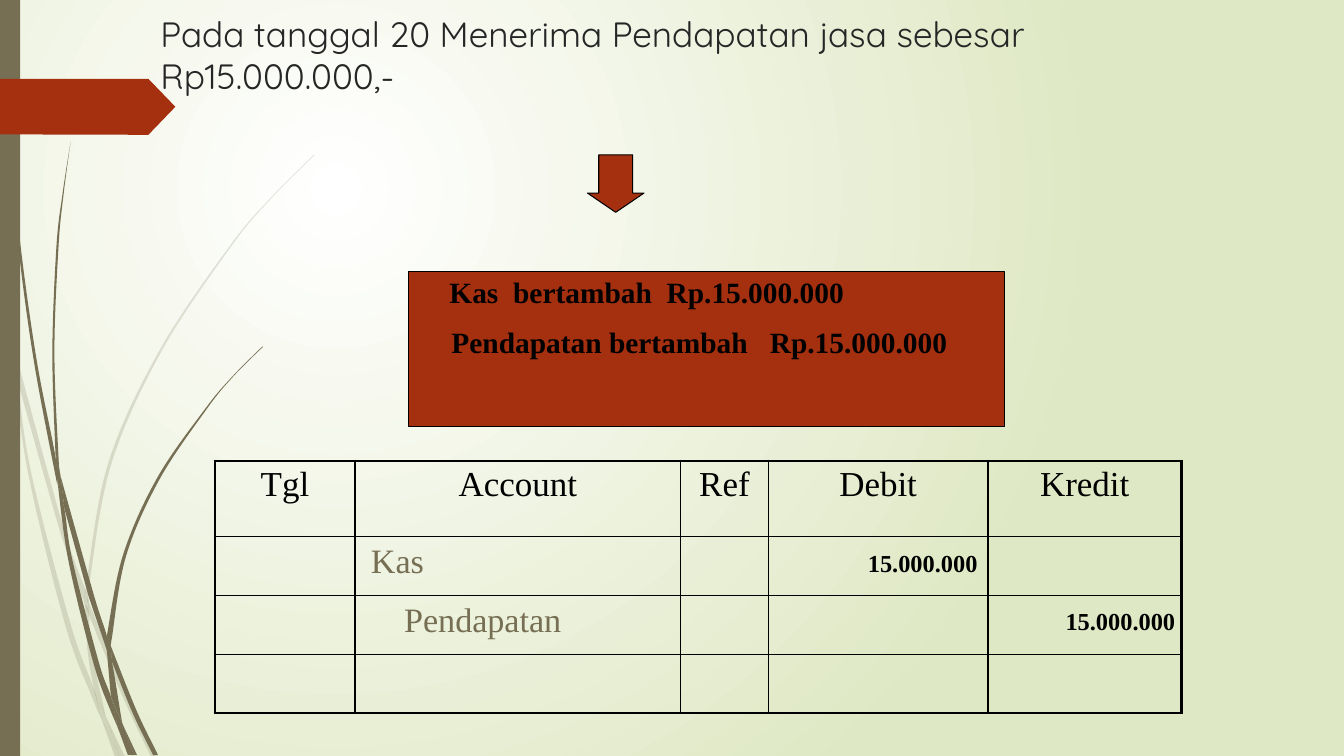
from lxml import etree
from pptx import Presentation
from pptx.dml.color import RGBColor
from pptx.enum.shapes import MSO_SHAPE
from pptx.enum.text import MSO_ANCHOR, PP_ALIGN
from pptx.oxml import parse_xml
from pptx.oxml.ns import nsdecls, qn
from pptx.util import Pt

LEFT, CENTER, RIGHT = PP_ALIGN.LEFT, PP_ALIGN.CENTER, PP_ALIGN.RIGHT
TOP, MIDDLE = MSO_ANCHOR.TOP, MSO_ANCHOR.MIDDLE
RECTANGLE, DOWN_ARROW = MSO_SHAPE.RECTANGLE, MSO_SHAPE.DOWN_ARROW

COLORS = {"black": "000000", "title": "262626", "olive": "766F54",
          "rust": "A53010", "white": "FFFFFF", "pale": "DFE8C4"}
SERIF = "Times New Roman"

TITLE = "Pada tanggal 20 Menerima Pendapatan jasa sebesar Rp15.000.000,-"
HEADERS = ["Tgl", "Account", "Ref", "Debit", "Kredit"]
COLUMN_WIDTHS = [100.1, 232.6, 62.6, 157, 138.2]
ROW_HEIGHTS = [54, 42, 42, 42]

# text, (left, top, width, height), size, colour, bold, alignment, anchor
ENTRIES = [
    ("Kas  bertambah  Rp.15.000.000", (314.6, 193, 297, 32), 21, "black", True, LEFT, TOP),
    ("Pendapatan bertambah   Rp.15.000.000", (316, 228.7, 369, 32), 21, "black", True, LEFT, TOP),
    ("Kas", (258.5, 392.4, 177, 15), 24.4, "olive", False, LEFT, MIDDLE),
    ("15.000.000", (612.7, 388.4, 92, 27), 17.4, "black", True, RIGHT, TOP),
    ("Pendapatan", (282.2, 432, 207, 20), 24.4, "olive", False, LEFT, MIDDLE),
    ("15.000.000", (753.9, 429.8, 92, 27), 17.4, "black", True, RIGHT, TOP),
]

# each piece of grass: one curved side, then the other side on the way back
FAINT_GRASS = [
    ([(7.9, 252), (6.5, 231.8), (0, 203)], [(0, 215.3), (7.2, 247.7)]),
    ([(10.1, 248.4), (44.6, 374.4), (61.2, 421.9)], [(60.5, 431.3), (41.8, 375.8), (12.2, 270.7)]),
    ([(63.4, 429.1), (66.2, 437), (91.4, 498.2), (111.6, 540.7)],
     [(108, 540.7), (88.6, 499.7), (63.4, 439.2)]),
    ([(75.6, 511.9), (89.3, 540.7)], [(85.7, 540.7)]),
    ([(7.9, 252), (12.2, 270.7), (22.3, 337.7), (50.4, 445.7), (67, 491.8), (71.3, 509)],
     [(72.7, 514.1), (66.2, 499), (46.8, 447.1), (20.2, 338.4), (7.9, 252)]),
    ([(60.5, 431.3), (63.4, 437.8), (65.5, 465.1), (75.6, 511.9)],
     [(69.1, 498.2), (67, 491.8), (62.6, 465.1), (60.5, 431.3)]),
    ([(61.2, 421.9), (61.2, 420.5), (77, 331.9), (113.8, 250.6), (164.2, 175.7),
      (193, 141.8), (224.6, 110.2)],
     [(224.6, 110.9), (193, 142.6), (164.9, 176.4), (115.2, 251.3), (79.2, 332.6),
      (63.4, 420.5), (63.4, 429.1)]),
    ([(72.7, 514.1), (85.7, 540.7)], [(82.1, 540.7)]),
    ([(61.2, 421.9), (63.4, 429.1), (63.4, 439.2)], [(60.5, 431.3)]),
    ([(67, 491.8), (69.1, 498.2), (75.6, 511.9), (85.7, 540.7)], [(72.7, 514.1), (71.3, 509)]),
]
SOLID_GRASS = [
    ([(2.9, 0), (3.6, 34.6), (5.8, 78.5), (13.7, 167), (25.9, 255.6), (39.6, 326.2), (41, 346.3)],
     [(40.3, 343.4), (23.8, 255.6), (12.2, 167.8), (5, 79.2), (2.9, 34.6), (2.2, 0)]),
    ([(43.2, 339.8), (67, 424.8), (76.3, 454.3), (76.3, 464.4)], [(63.4, 426.2), (46.1, 363.6)]),
    ([(79.2, 461.5), (97.9, 508.3), (113, 539.3)], [(109.4, 539.3), (95, 509.8), (79.9, 472.3)]),
    ([(41, 343.4), (46.1, 363.6), (51.8, 400.3), (70.6, 473), (79.2, 497.5), (84.2, 519.8)],
     [(79.9, 509.8), (67, 474.5), (49, 401), (41, 343.4)]),
    ([(43.2, 339.8), (41.8, 326.2), (38.9, 251.3), (41.8, 176.4), (45.4, 139), (50.4, 101.5)],
     [(50.4, 101.5), (44.6, 139), (40.3, 176.4), (37.4, 251.3), (39.6, 323.3)]),
    ([(87.8, 517.7), (97.9, 539.3)], [(95.8, 539.3)]),
    ([(39.6, 323.3), (43.2, 339.8), (46.1, 363.6)], [(41, 343.4)]),
    ([(76.3, 454.3), (87.8, 396.7), (112.3, 341.3), (146.9, 291.6), (166.3, 268.6), (187.2, 247.7)],
     [(187.9, 247.7), (166.3, 269.3), (147.6, 292.3), (113.8, 342.7), (90, 397.4),
      (79.9, 455.8), (79.2, 461.5)]),
    ([(84.2, 519.8), (94.3, 539.3)], [(91.4, 539.3)]),
    ([(76.3, 464.4), (79.9, 472.3), (87.1, 515.5), (87.8, 517.7)], [(83.5, 508.3), (79.2, 497.5)]),
    ([(76.3, 454.3), (79.2, 461.5), (79.9, 472.3)], [(76.3, 464.4)]),
    ([(79.2, 497.5), (83.5, 508.3), (87.8, 517.7), (95.8, 539.3)], [(93.6, 539.3), (84.2, 519.8)]),
]
RIBBON = [(0, 56.3), (106, 56.3), (125.3, 76.3), (106, 96.3), (0, 96)]


def rgb(name):
    return RGBColor.from_string(COLORS[name])


def paint(shape, fill, outlined=False):
    shape.shadow.inherit = False
    shape.fill.solid()
    shape.fill.fore_color.rgb = rgb(fill)
    if outlined:
        shape.line.color.rgb = rgb("black")
        shape.line.width = Pt(0.75)
    else:
        shape.line.fill.background()


def add_preset(kind, box, fill, outlined=False):
    shape = slide.shapes.add_shape(kind, *map(Pt, box))
    paint(shape, fill, outlined)
    return shape


def add_outline(points, fill):
    corners = [(Pt(x), Pt(y)) for x, y in points]
    builder = slide.shapes.build_freeform(*corners[0])
    builder.add_line_segments(corners[1:], close=True)
    shape = builder.convert_to_shape()
    paint(shape, fill)
    return shape


def add_grass(side, back, opacity):
    """Outline whose two sides are bent into smooth Bézier curves."""
    blade = add_outline(side + back, "olive")
    points = [(int(pt.get("x")), int(pt.get("y"))) for pt in blade.element.iter(qn("a:pt"))]
    turn = len(side)
    for i, segment in enumerate(list(blade.element.iter(qn("a:lnTo")))):
        if i + 1 == turn:
            continue
        start, end = points[i], points[i + 1]
        before = start if i in (0, turn) else points[i - 1]
        after = end if i + 2 in (turn, len(points)) else points[i + 2]
        segment.tag = qn("a:cubicBezTo")
        controls = [[s + (e - b) / 6 for b, s, e in zip(before, start, end)],
                    [e - (a - s) / 6 for s, e, a in zip(start, end, after)]]
        for index, (x, y) in enumerate(controls):
            control = etree.Element(qn("a:pt"), x=str(round(x)), y=str(round(y)))
            segment.insert(index, control)
    if opacity < 100:
        color = next(blade.element.spPr.iter(qn("a:srgbClr")))
        etree.SubElement(color, qn("a:alpha"), val=str(opacity * 1000))


def write(frame, text, size, color, font=SERIF, bold=False, align=LEFT):
    paragraph = frame.paragraphs[0]
    paragraph.alignment = align
    run = paragraph.add_run()
    run.text = text
    run.font.name, run.font.size, run.font.bold = font, Pt(size), bold
    run.font.color.rgb = rgb(color)


def set_borders(cell, widths):
    properties = cell._tc.get_or_add_tcPr()
    for index, (side, width) in enumerate(widths.items()):
        properties.insert(index, parse_xml(
            f'<a:ln{side} {nsdecls("a")} w="{Pt(width)}"><a:solidFill>'
            f'<a:srgbClr val="{COLORS["black"]}"/></a:solidFill></a:ln{side}>'))


prs = Presentation()
prs.slide_width, prs.slide_height = Pt(960), Pt(540)
slide = prs.slides.add_slide(prs.slide_layouts[5])
slide.element.cSld.insert(0, parse_xml(
    f'<p:bg {nsdecls("p", "a")}><p:bgPr><a:gradFill rotWithShape="1"><a:gsLst>'
    f'<a:gs pos="0"><a:srgbClr val="{COLORS["white"]}"/></a:gs>'
    f'<a:gs pos="100000"><a:srgbClr val="{COLORS["pale"]}"/></a:gs></a:gsLst>'
    '<a:path path="circle"><a:fillToRect l="50000" t="50000" r="100000" b="100000"/></a:path>'
    '</a:gradFill><a:effectLst/></p:bgPr></p:bg>'))

for pieces, opacity in ((FAINT_GRASS, 20), (SOLID_GRASS, 100)):
    for side, back in pieces:
        add_grass(side, back, opacity)
add_preset(RECTANGLE, (0, 0, 14.4, 540), "olive")
add_outline(RIBBON, "rust")

title = slide.shapes.title
title.left, title.top, title.width, title.height = map(Pt, (107.3, 5.4, 753, 72))
title.text_frame.word_wrap = True
title.text_frame.vertical_anchor = TOP
write(title.text_frame, TITLE, 25.1, "title", "Quicksand")
slide.shapes._spTree.append(title.element)  # in front of the ribbon

arrow = add_preset(DOWN_ARROW, (419.6, 110.7, 40.4, 41), "rust", True)
arrow.adjustments[0], arrow.adjustments[1] = 0.6, 0.34
add_preset(RECTANGLE, (292, 194, 425.5, 111), "rust", True)

journal = slide.shapes.add_table(
    len(ROW_HEIGHTS), len(HEADERS),
    *map(Pt, (153.5, 329.3, sum(COLUMN_WIDTHS), sum(ROW_HEIGHTS)))).table
for column, width in zip(journal.columns, COLUMN_WIDTHS):
    column.width = Pt(width)
last_row, last_column = len(ROW_HEIGHTS) - 1, len(HEADERS) - 1
for r, height in enumerate(ROW_HEIGHTS):
    journal.rows[r].height = Pt(height)
    for c, header in enumerate(HEADERS):
        cell = journal.cell(r, c)
        cell.fill.background()
        cell.margin_left = cell.margin_right = Pt(6.5)
        cell.margin_top = cell.margin_bottom = Pt(3)
        edges = {"L": c == 0, "R": c == last_column, "T": r == 0, "B": r == last_row}
        set_borders(cell, {edge: 2.25 if outer else 1 for edge, outer in edges.items()})
        if r == 0:
            write(cell.text_frame, header, 25, "black", align=CENTER)

for text, box, size, color, bold, align, anchor in ENTRIES:
    frame = slide.shapes.add_textbox(*map(Pt, box)).text_frame
    frame.word_wrap = False
    frame.vertical_anchor = anchor
    frame.margin_left = frame.margin_right = Pt(6.5)
    frame.margin_top = frame.margin_bottom = Pt(3)
    write(frame, text, size, color, bold=bold, align=align)

prs.save("out.pptx")
